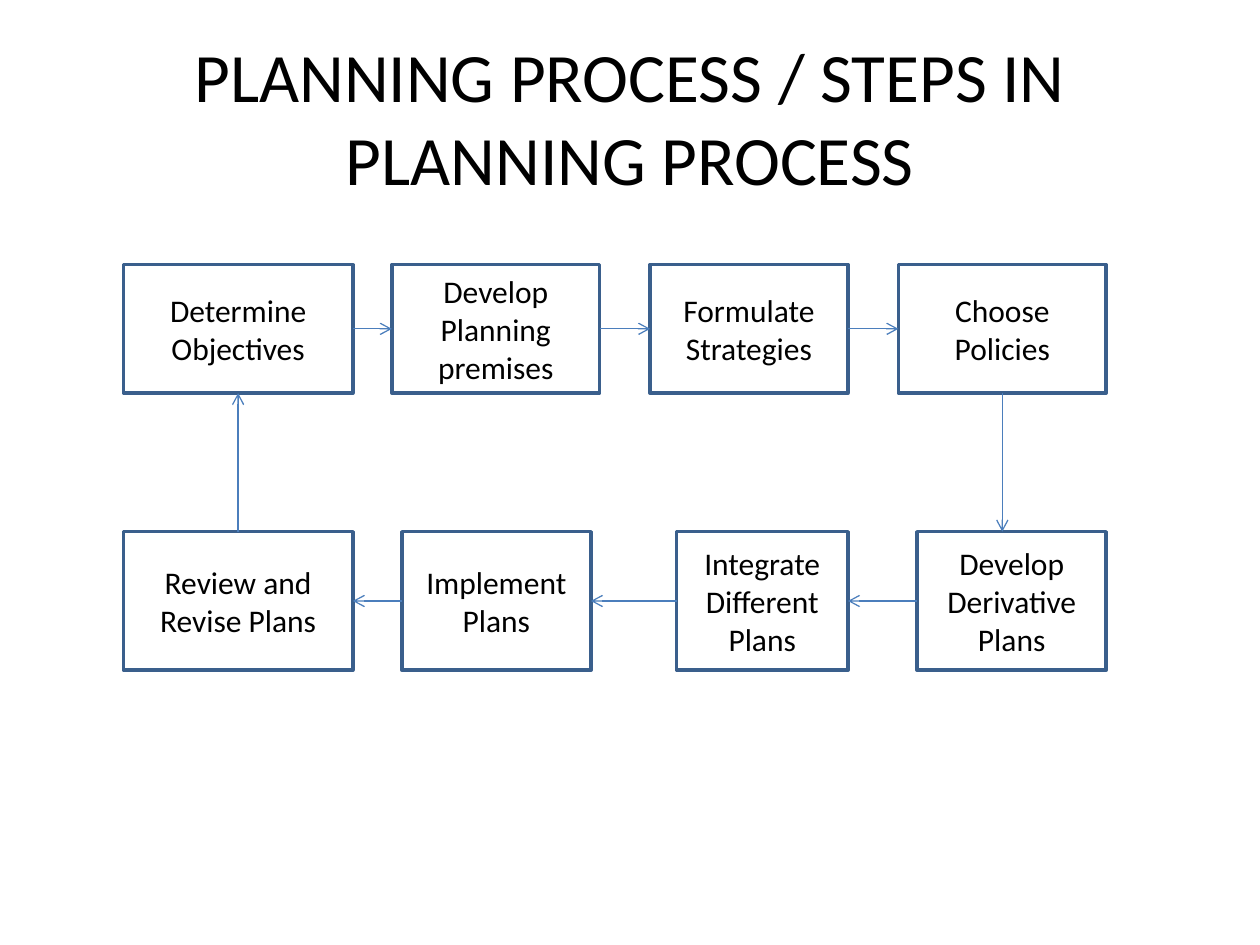
from dataclasses import dataclass
from itertools import pairwise

from lxml.etree import SubElement
from pptx import Presentation
from pptx.dml.color import RGBColor
from pptx.enum.shapes import MSO_CONNECTOR, MSO_SHAPE
from pptx.enum.text import MSO_ANCHOR, PP_ALIGN
from pptx.oxml.ns import qn
from pptx.util import Inches, Pt

FONT = "Calibri"
TEXT_COLOUR = "000000"
BOX_FILL = "FFFFFF"
BOX_LINE = "3A5F8C"
ARROW_COLOUR = "4B7EBC"
TOP, LEFT, BOTTOM, RIGHT = range(4)


@dataclass(frozen=True)
class Step:
    text: str
    left: float
    width: float


@dataclass(frozen=True)
class Row:
    top: float
    height: float
    steps: tuple[Step, ...]


# Both rows are listed in the order of the process.
UPPER_ROW = Row(2.1, 1.02, (
    Step("Determine Objectives", 0.98, 1.82),
    Step("Develop Planning premises", 3.11, 1.65),
    Step("Formulate Strategies", 5.16, 1.57),
    Step("Choose Policies", 7.13, 1.65),
))
LOWER_ROW = Row(4.22, 1.1, (
    Step("Develop Derivative Plans", 7.28, 1.5),
    Step("Integrate Different Plans", 5.37, 1.36),
    Step("Implement Plans", 3.19, 1.5),
    Step("Review and Revise Plans", 0.98, 1.82),
))


def colour(value: str) -> RGBColor:
    return RGBColor.from_string(value)


def write_text(shape, text: str, *, size: float, text_colour: str = TEXT_COLOUR) -> None:
    """Fill a shape with one centred, wrapped paragraph."""
    frame = shape.text_frame
    frame.word_wrap = True
    frame.vertical_anchor = MSO_ANCHOR.MIDDLE
    paragraph = frame.paragraphs[0]
    paragraph.alignment = PP_ALIGN.CENTER
    run = paragraph.add_run()
    run.text = text
    run.font.name = FONT
    run.font.size = Pt(size)
    run.font.color.rgb = colour(text_colour)


def add_step(slide, step: Step, row: Row):
    box = slide.shapes.add_shape(
        MSO_SHAPE.RECTANGLE,
        Inches(step.left), Inches(row.top), Inches(step.width), Inches(row.height),
    )
    box.shadow.inherit = False
    box.fill.solid()
    box.fill.fore_color.rgb = colour(BOX_FILL)
    box.line.color.rgb = colour(BOX_LINE)
    box.line.width = Pt(2)
    write_text(box, step.text, size=18)
    return box


def add_arrow(slide, start, start_side: int, end=None, end_side: int = LEFT):
    """Add an arrow joined to the start box and, if given, the end box."""
    arrow = slide.shapes.add_connector(MSO_CONNECTOR.STRAIGHT, 0, 0, 0, 0)
    arrow.begin_connect(start, start_side)
    if end is not None:
        arrow.end_connect(end, end_side)
    arrow.line.color.rgb = colour(ARROW_COLOUR)
    arrow.line.width = Pt(0.75)
    SubElement(arrow.line._get_or_add_ln(), qn("a:tailEnd"), type="arrow")
    SubElement(arrow._element.spPr, qn("a:effectLst"))
    return arrow


def main() -> None:
    presentation = Presentation()
    presentation.slide_width = Inches(10)
    presentation.slide_height = Inches(7.5)
    slide = presentation.slides.add_slide(presentation.slide_layouts[6])

    title = slide.shapes.add_textbox(Inches(0.5), Inches(0.3), Inches(9), Inches(1.25))
    write_text(title, "PLANNING PROCESS / STEPS IN PLANNING PROCESS", size=39.6)

    upper = [add_step(slide, step, UPPER_ROW) for step in UPPER_ROW.steps]
    lower = [add_step(slide, step, LOWER_ROW) for step in LOWER_ROW.steps]

    for start, end in pairwise(upper):
        add_arrow(slide, start, RIGHT, end, LEFT)
    # The lower box is not centred under the upper one, so this arrow drops straight down.
    descent = add_arrow(slide, upper[-1], BOTTOM)
    descent.end_x = descent.begin_x
    descent.end_y = lower[0].top
    for start, end in pairwise(lower):
        add_arrow(slide, start, LEFT, end, RIGHT)
    add_arrow(slide, lower[-1], TOP, upper[0], BOTTOM)

    presentation.save("out.pptx")


if __name__ == "__main__":
    main()
